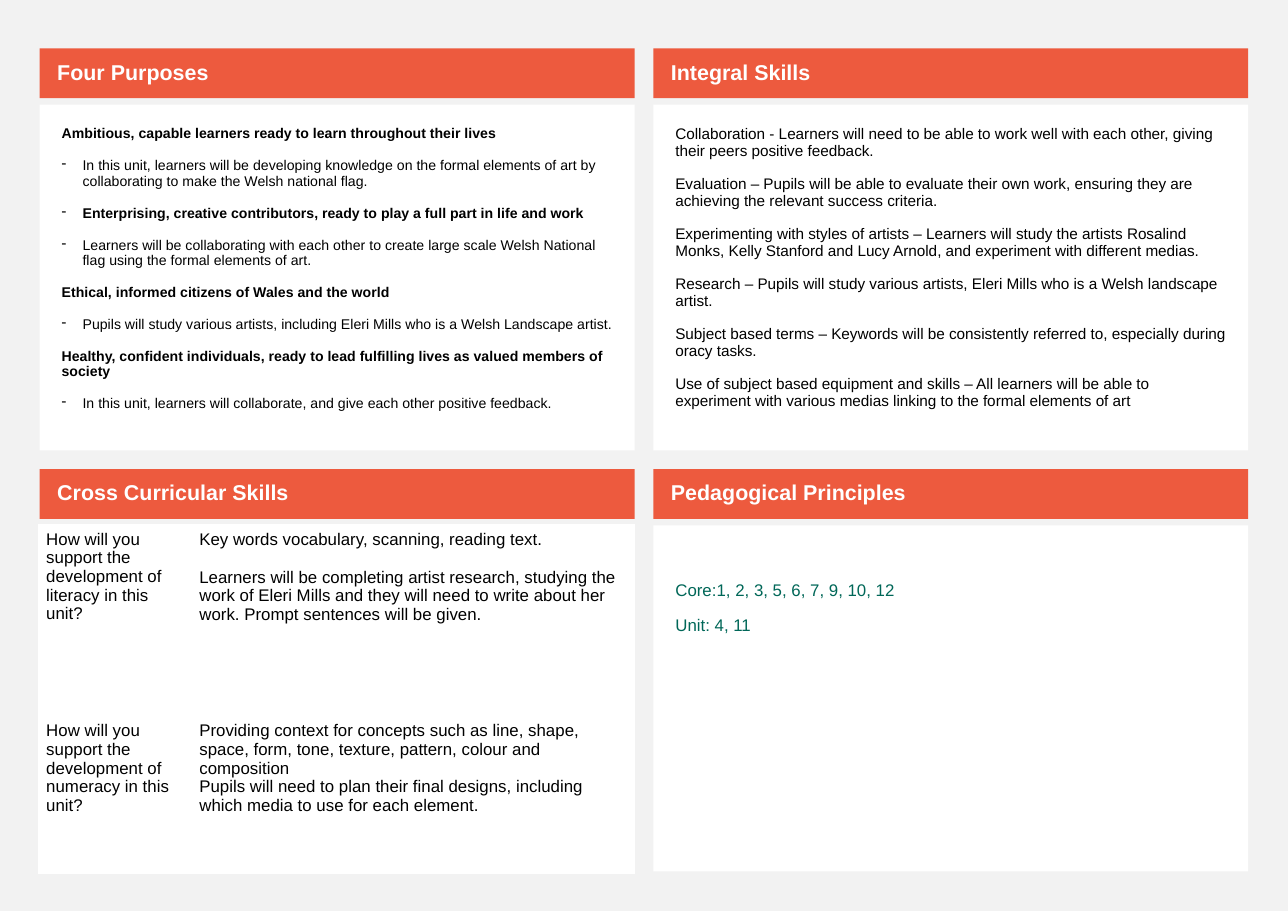
from dataclasses import dataclass

from lxml import etree
from pptx import Presentation
from pptx.dml.color import RGBColor
from pptx.enum import shapes, text
from pptx.oxml import ns
from pptx.util import Inches, Pt


@dataclass(frozen=True)
class Theme:
    font: str = "Arial"
    backdrop: str = "F2F2F2"
    banner: str = "ED5A3E"
    paper: str = "FFFFFF"
    ink: str = "000000"
    accent: str = "006758"
    banner_size: float = 14
    purpose_size: float = 9.2
    skill_size: float = 10
    text_size: float = 11


@dataclass(frozen=True)
class Line:
    wording: str
    bold: bool = False
    dash: bool = False


LEFT, RIGHT = 0.36, 5.93
TOP, BOTTOM = 0.44, 4.26
CARD_WIDTH, BANNER_HEIGHT, CARD_HEIGHT = 5.4, 0.45, 3.14
CARD_DROP = 0.51
DASH_INDENT = 0.19

FOUR_PURPOSES = [
    Line("Ambitious, capable learners ready to learn throughout their lives", bold=True),
    Line("In this unit, learners will be developing knowledge on the formal elements of art by "
         "collaborating to make the Welsh national flag.", dash=True),
    Line("Enterprising, creative contributors, ready to play a full part in life and work",
         bold=True, dash=True),
    Line("Learners will be collaborating with each other to create large scale Welsh National "
         "flag using the formal elements of art.", dash=True),
    Line("Ethical, informed citizens of Wales and the world", bold=True),
    Line("Pupils will study various artists, including Eleri Mills who is a Welsh Landscape "
         "artist.", dash=True),
    Line("Healthy, confident individuals, ready to lead fulfilling lives as valued members of "
         "society", bold=True),
    Line("In this unit, learners will collaborate, and give each other positive feedback.",
         dash=True),
]
INTEGRAL_SKILLS = [
    Line("Collaboration - Learners will need to be able to work well with each other, "
         "giving their peers positive feedback."),
    Line("Evaluation – Pupils will be able to evaluate their own work, "
         "ensuring they are achieving the relevant success criteria."),
    Line("Experimenting with styles of artists – Learners will study the artists Rosalind "
         "Monks, Kelly Stanford and Lucy Arnold, and experiment with different medias."),
    Line("Research – Pupils will study various artists, Eleri Mills who is a Welsh landscape "
         "artist."),
    Line("Subject based terms – Keywords will be consistently referred to, especially during "
         "oracy tasks."),
    Line("Use of subject based equipment and skills – All learners will be able to "
         "experiment with various medias linking to the formal elements of art"),
]
PRINCIPLES = [Line("Core:1, 2, 3, 5, 6, 7, 9, 10, 12"), Line("Unit: 4, 11")]
LITERACY = [
    [Line("How will you support the development of literacy in this unit? ")],
    [Line("Key words vocabulary, scanning, reading text. "),
     Line("Learners will be completing artist research, studying the work of Eleri Mills and "
          "they will need to write about her work. Prompt sentences will be given.")],
]
NUMERACY = [
    [Line("How will you support the development of numeracy in this unit? ")],
    [Line("Providing context for concepts such as line, shape, space, form, tone, texture, "
          "pattern, colour and composition"),
     Line("Pupils will need to plan their final designs, including which media to use for "
          "each element.")],
]


def write(frame, lines, *, font, size, color, spacing=1.0, before=0):
    """Fill a text frame with formatted lines."""
    for index, line in enumerate(lines):
        paragraph = frame.add_paragraph() if index else frame.paragraphs[0]
        paragraph.alignment = text.PP_ALIGN.LEFT
        paragraph.line_spacing = spacing
        paragraph.space_before = Pt(before)
        run = paragraph.add_run()
        run.text = line.wording
        run.font.name = font
        run.font.size = Pt(size)
        run.font.bold = line.bold
        run.font.color.rgb = RGBColor.from_string(color)
        if line.dash:
            properties = paragraph._p.get_or_add_pPr()
            properties.set("marL", str(Inches(DASH_INDENT)))
            properties.set("indent", str(-Inches(DASH_INDENT)))
            etree.SubElement(properties, ns.qn("a:buChar")).set("char", "-")


class Board:
    """Draws the planning panels on one slide in one style."""

    def __init__(self, slide, theme):
        """Keep the slide and theme, and paint the backdrop."""
        self.slide = slide
        self.theme = theme
        slide.background.fill.solid()
        slide.background.fill.fore_color.rgb = RGBColor.from_string(theme.backdrop)

    def block(self, left, top, height, fill, insets):
        """Add a plain rectangle and return its text frame."""
        panel = self.slide.shapes.add_shape(
            shapes.MSO_SHAPE.RECTANGLE,
            Inches(left), Inches(top), Inches(CARD_WIDTH), Inches(height))
        panel.shadow.inherit = False
        panel.fill.solid()
        panel.fill.fore_color.rgb = RGBColor.from_string(fill)
        panel.line.fill.background()
        frame = panel.text_frame
        frame.word_wrap = True
        (frame.margin_left, frame.margin_top,
         frame.margin_right, frame.margin_bottom) = map(Inches, insets)
        return frame

    def banner(self, left, top, title):
        """Add a coloured heading bar."""
        frame = self.block(left, top, BANNER_HEIGHT, self.theme.banner, (0.16, 0.05, 0.1, 0.05))
        frame.vertical_anchor = text.MSO_ANCHOR.MIDDLE
        write(frame, [Line(title, bold=True)], font=self.theme.font,
              size=self.theme.banner_size, color=self.theme.paper, spacing=0.9)

    def card(self, left, top, lines, size, color, top_inset=0.2):
        """Add the white text panel that sits under a banner."""
        frame = self.block(left, top + CARD_DROP, CARD_HEIGHT, self.theme.paper,
                           (0.2, top_inset, 0.2, 0.2))
        frame.vertical_anchor = text.MSO_ANCHOR.TOP
        write(frame, lines, font=self.theme.font, size=size, color=color,
              spacing=0.9, before=11)

    def edge(self, cell):
        """Give a table cell thin borders on all sides."""
        properties = cell._tc.get_or_add_tcPr()
        for index, side in enumerate(("lnL", "lnR", "lnT", "lnB")):
            border = etree.Element(ns.qn("a:" + side), w=str(Pt(0.75)))
            paint = etree.SubElement(border, ns.qn("a:solidFill"))
            etree.SubElement(paint, ns.qn("a:srgbClr")).set("val", self.theme.paper)
            properties.insert(index, border)

    def table(self, left, top, widths, heights, rows, gaps):
        """Add a white table with the given space between paragraphs in each row."""
        grid = self.slide.shapes.add_table(
            len(rows), len(widths), Inches(left), Inches(top),
            Inches(sum(widths)), Inches(sum(heights))).table
        grid.first_row = grid.horz_banding = False
        for column, width in zip(grid.columns, widths):
            column.width = Inches(width)
        for row, height, contents, gap in zip(grid.rows, heights, rows, gaps):
            row.height = Inches(height)
            for cell, lines in zip(row.cells, contents):
                cell.fill.solid()
                cell.fill.fore_color.rgb = RGBColor.from_string(self.theme.paper)
                cell.margin_left = cell.margin_right = Inches(0.07)
                cell.margin_top = cell.margin_bottom = Inches(0.05)
                self.edge(cell)
                write(cell.text_frame, lines, font=self.theme.font,
                      size=self.theme.text_size, color=self.theme.ink, before=gap)


def main():
    """Build the planning slide and save it."""
    deck = Presentation()
    deck.slide_width, deck.slide_height = Inches(11.69), Inches(8.27)
    theme = Theme()
    board = Board(deck.slides.add_slide(deck.slide_layouts[6]), theme)

    board.card(LEFT, TOP, FOUR_PURPOSES, theme.purpose_size, theme.ink)
    board.card(RIGHT, TOP, INTEGRAL_SKILLS, theme.skill_size, theme.ink)
    board.card(RIGHT, BOTTOM, PRINCIPLES, theme.text_size, theme.accent, top_inset=0.51)
    for left, top, title in (
            (LEFT, TOP, "Four Purposes"),
            (RIGHT, TOP, "Integral Skills"),
            (LEFT, BOTTOM, "Cross Curricular Skills"),
            (RIGHT, BOTTOM, "Pedagogical Principles")):
        board.banner(left, top, title)
    board.table(0.35, 4.76, (1.39, 4.02), (1.74, 1.43), (LITERACY, NUMERACY), (12.6, 0))

    deck.save("out.pptx")


if __name__ == "__main__":
    main()
